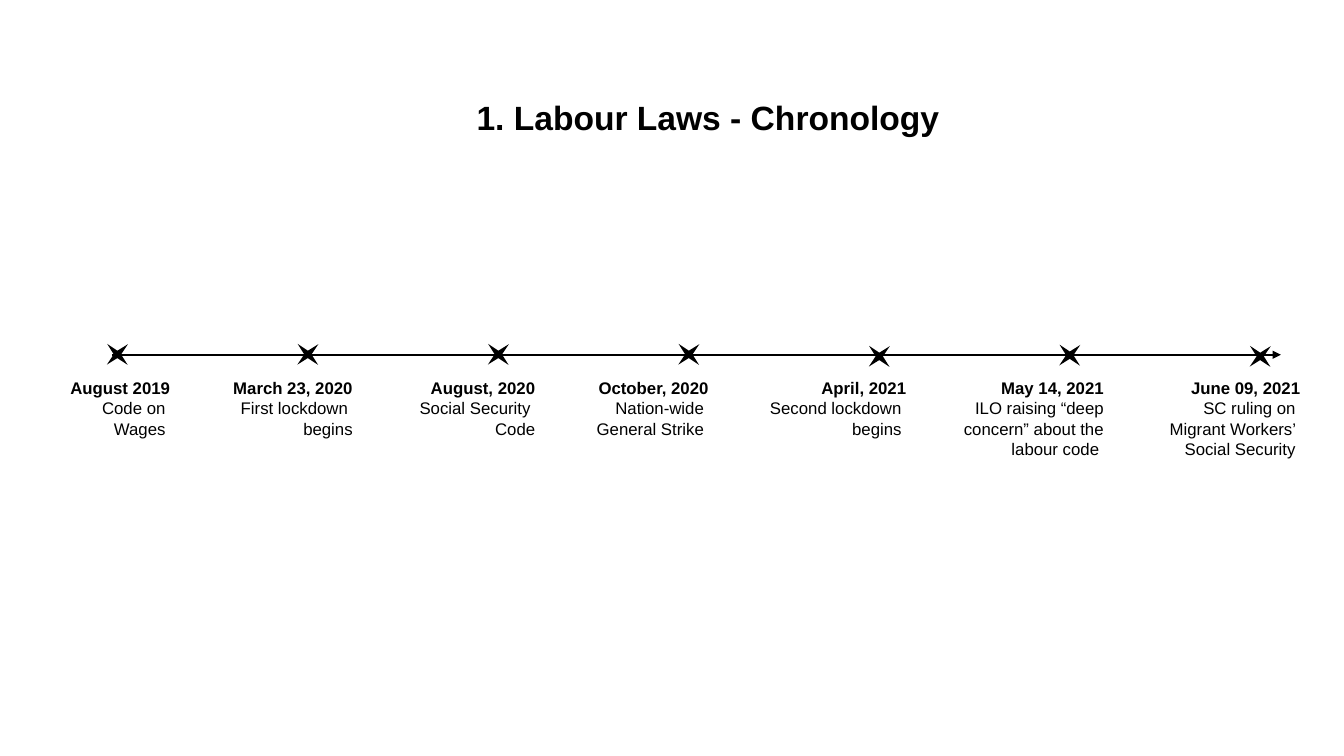
from pptx import Presentation
from pptx.dml.color import RGBColor
from pptx.enum.shapes import MSO_CONNECTOR as Connector, MSO_SHAPE as Shape
from pptx.enum.text import MSO_ANCHOR as Anchor, MSO_AUTO_SIZE as AutoSize, PP_ALIGN as Align
from pptx.oxml.ns import qn
from pptx.util import Cm, Pt
from lxml import etree

BLACK = RGBColor(0, 0, 0)
FONT = "Arial"

AXIS_LEFT, AXIS_RIGHT, AXIS_Y = 2.82, 32.28, 8.94
STAR_LEFT, STAR_STEP, STAR_SIZE = 2.59, 4.8, 0.74
LABEL_TOP = 9.4

# label left, label width, label height, star top (cm), date, lines of text
EVENTS = [
    (1.52, 3.02, 1.8, 8.56, "August 2019", ["Code on ", "Wages "]),
    (5.46, 3.68, 1.8, 8.56, "March 23, 2020", ["First lockdown ", "begins"]),
    (10.06, 3.68, 1.8, 8.56, "August, 2020", ["Social Security ", "Code"]),
    (14.66, 3.45, 1.8, 8.56, "October, 2020", ["Nation-wide ", "General Strike "]),
    (19.05, 4.04, 1.8, 8.61, "April, 2021", ["Second lockdown ", "begins "]),
    (24.03, 4.04, 2.31, 8.58, "May 14, 2021",
     ["ILO raising “deep concern” about the labour code "]),
    (28.98, 4.04, 2.31, 8.61, "June 09, 2021",
     ["SC ruling on ", "Migrant Workers’ ", "Social Security "]),
]


def add_text_box(slide, left, top, width, height):
    box = slide.shapes.add_textbox(Cm(left), Cm(top), Cm(width), Cm(height))
    box.text_frame.word_wrap = True
    return box.text_frame


def style_paragraph(para, size, bold):
    para.font.name = FONT
    para.font.size = Pt(size)
    para.font.bold = bold
    para.font.color.rgb = BLACK


def add_title(slide, text):
    frame = add_text_box(slide, 11.76, 2.36, 12.73, 1.32)
    frame.vertical_anchor = Anchor.MIDDLE
    para = frame.paragraphs[0]
    para.text = text
    para.line_spacing = 0.9
    style_paragraph(para, 24, True)


def add_axis(slide):
    axis = slide.shapes.add_connector(
        Connector.STRAIGHT, Cm(AXIS_LEFT), Cm(AXIS_Y), Cm(AXIS_RIGHT), Cm(AXIS_Y))
    axis.line.color.rgb = BLACK
    axis.line.width = Pt(1.5)
    etree.SubElement(axis.line._get_or_add_ln(), qn("a:tailEnd"), type="triangle")
    etree.SubElement(axis._element.spPr, qn("a:effectLst"))


def add_star(slide, left, top):
    star = slide.shapes.add_shape(
        Shape.STAR_4_POINT, Cm(left), Cm(top), Cm(STAR_SIZE), Cm(STAR_SIZE))
    star.adjustments[0] = 0.125
    star.rotation = 315.7
    star.shadow.inherit = False
    star.fill.solid()
    star.fill.fore_color.rgb = BLACK
    star.line.fill.background()


def add_label(slide, left, width, height, date, lines):
    """Place a right-aligned bold date with its event text beneath."""
    frame = add_text_box(slide, left, LABEL_TOP, width, height)
    frame.auto_size = AutoSize.SHAPE_TO_FIT_TEXT
    frame.text = "\n".join([date, *lines])
    for index, para in enumerate(frame.paragraphs):
        para.alignment = Align.RIGHT
        style_paragraph(para, 12, index == 0)


def main():
    deck = Presentation()
    deck.slide_width, deck.slide_height = Cm(33.87), Cm(19.05)
    slide = deck.slides.add_slide(deck.slide_layouts[6])
    add_title(slide, "1. Labour Laws - Chronology")
    add_axis(slide)
    for index, (left, width, height, star_top, date, lines) in enumerate(EVENTS):
        add_label(slide, left, width, height, date, lines)
        add_star(slide, STAR_LEFT + index * STAR_STEP, star_top)
    deck.save("out.pptx")


if __name__ == "__main__":
    main()
